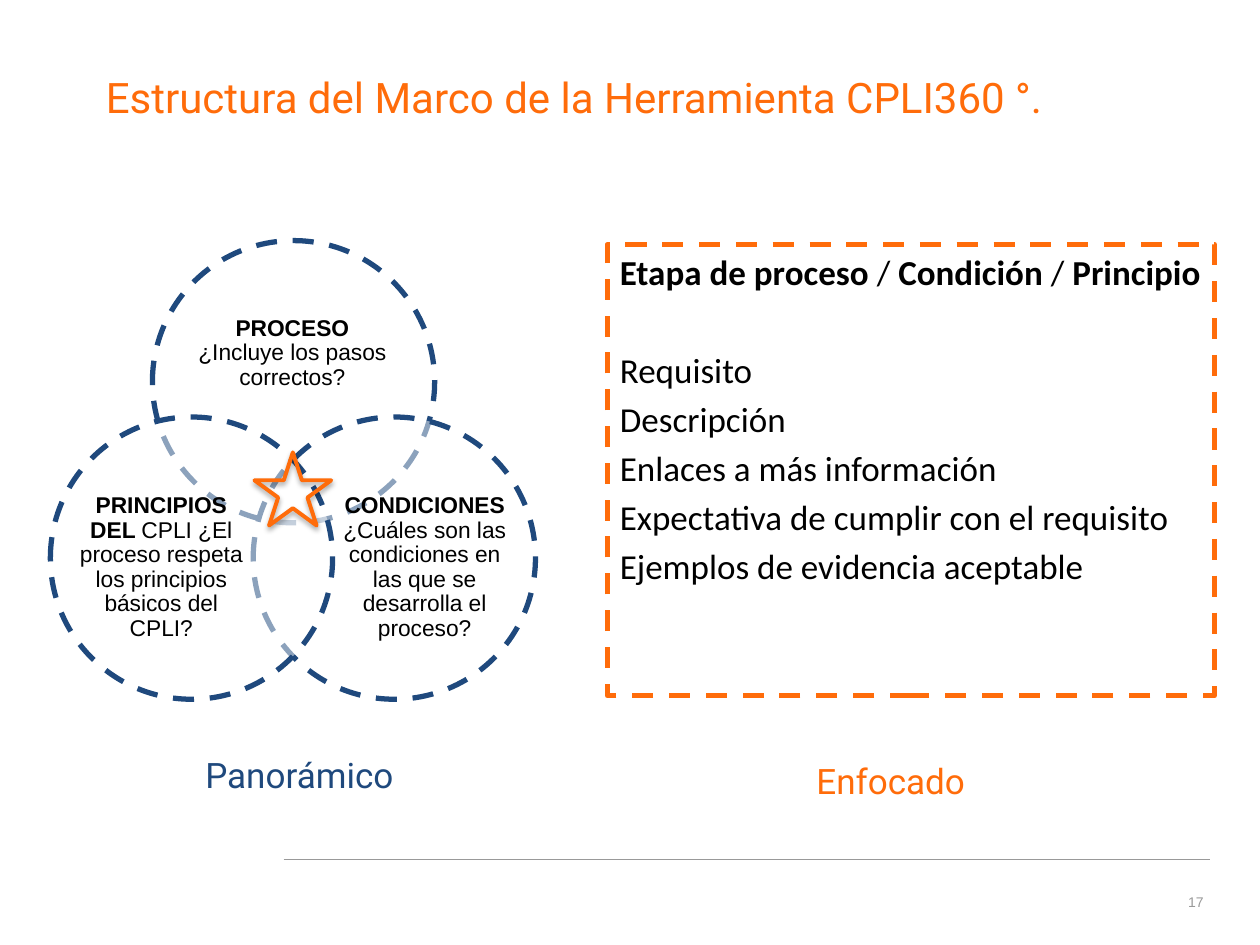
from dataclasses import dataclass
from lxml.etree import SubElement
from pptx import Presentation
from pptx.dml.color import RGBColor
from pptx.enum.dml import MSO_LINE
from pptx.enum.shapes import MSO_CONNECTOR, MSO_SHAPE
from pptx.enum.text import MSO_ANCHOR, MSO_AUTO_SIZE, PP_ALIGN
from pptx.oxml.ns import qn
from pptx.util import Pt


@dataclass(frozen=True)
class Theme:
    orange: str = "FF6C0A"
    navy: str = "1F497D"
    black: str = "000000"
    white: str = "FFFFFF"
    gray: str = "999999"
    head: str = "Roboto"
    body: str = "Calibri"
    label: str = "Arial"
    title: int = 24
    text: int = 20
    note: int = 13
    page: int = 8


THEME = Theme()
SIDE = 161.3
RINGS = [
    ((87.1, 137.5), (108, 165.6, 118, 72.7),
     [[("PROCESO", True)], [("¿Incluye los pasos correctos?", False)]]),
    ((144.7, 238.3), (194.4, 280.1, 96.5, 88.6),
     [[("CONDICIONES ", True),
       ("¿Cuáles son las condiciones en las que se desarrolla el proceso?", False)]]),
    ((28.8, 238.3), (43.9, 280.1, 96.5, 88.6),
     [[("PRINCIPIOS DEL ", True),
       ("CPLI ¿El proceso respeta los principios básicos del CPLI?", False)]]),
]
ITEMS = [
    [("Etapa de proceso ", True), ("/ ", False), ("Condición", True),
     (" / ", False), ("Principio", True)],
    [("Requisito", False)],
    [("Descripción", False)],
    [("Enlaces a más información", False)],
    [("Expectativa de cumplir con el requisito", False)],
    [("Ejemplos de evidencia aceptable", False)],
]


def apply(thing, form):
    for name, value in form.items():
        setattr(thing, name, value)


def place(shape, box):
    names = ("left", "top", "width", "height")
    apply(shape, dict(zip(names, map(Pt, box))))


def stroke(line, color, width, dash=None):
    line.color.rgb = RGBColor.from_string(color)
    apply(line, {"width": Pt(width), "dash_style": dash})


def write(shape, paras, face, size, color, inset=(7.2, 3.6),
          anchor=MSO_ANCHOR.TOP, form=None):
    frame = shape.text_frame
    side, edge = map(Pt, inset)
    apply(frame, {"word_wrap": True, "auto_size": MSO_AUTO_SIZE.NONE,
                  "vertical_anchor": anchor,
                  "margin_left": side, "margin_right": side,
                  "margin_top": edge, "margin_bottom": edge})
    for i, runs in enumerate(paras):
        para = frame.add_paragraph() if i else frame.paragraphs[0]
        apply(para, {"alignment": PP_ALIGN.LEFT, **(form or {})})
        for text, bold in runs:
            run = para.add_run()
            run.text = text
            apply(run.font, {"name": face, "size": Pt(size), "bold": bold})
            run.font.color.rgb = RGBColor.from_string(color)
    return frame.paragraphs


def label(slide, box, paras, *style, **more):
    shape = slide.shapes.add_textbox(*map(Pt, box))
    write(shape, paras, *style, **more)


def ring(slide, spot, box, paras):
    shape = slide.shapes.add_shape(MSO_SHAPE.OVAL, *map(Pt, (*spot, SIDE, SIDE)))
    shape.shadow.inherit = False
    shape.fill.solid()
    shape.fill.fore_color.rgb = RGBColor.from_string(THEME.white)
    tint = shape.fill._xPr.find(qn("a:solidFill"))[0]
    SubElement(tint, qn("a:alpha"), val="49000")
    stroke(shape.line, THEME.navy, 3, MSO_LINE.DASH)
    label(slide, box, paras, THEME.label, THEME.note, THEME.black,
          inset=(0, 0), anchor=MSO_ANCHOR.MIDDLE,
          form={"alignment": PP_ALIGN.CENTER, "line_spacing": 0.9})


def panel(shape):
    place(shape, (347, 139.7, 347, 257.8))
    stroke(shape.line, THEME.orange, 3, MSO_LINE.DASH)
    paras = write(shape, ITEMS, THEME.body, THEME.text, THEME.black)
    for i, para in enumerate(paras):
        props = para._p.get_or_add_pPr()
        props.set("marL", "0")
        props.set("indent", "0")
        SubElement(props, qn("a:buNone"))
        para.space_before = Pt((0, 32)[i] if i < 2 else 4)


def star(slide):
    shape = slide.shapes.add_shape(MSO_SHAPE.STAR_5_POINT,
                                   *map(Pt, (145.4, 258.5, 43.9, 41.8)))
    shape.fill.background()
    stroke(shape.line, THEME.orange, 2.25)
    shape.shadow.inherit = False
    glow = SubElement(shape._element.spPr.find(qn("a:effectLst")),
                      qn("a:outerShdw"), blurRad=str(Pt(3.1)),
                      dist=str(Pt(1.8)), dir="5400000", rotWithShape="0")
    tint = SubElement(glow, qn("a:srgbClr"), val=THEME.black)
    SubElement(tint, qn("a:alpha"), val="35000")


def rule(slide):
    line = slide.shapes.add_connector(MSO_CONNECTOR.STRAIGHT,
                                      *map(Pt, (162, 491, 691.2, 491)))
    stroke(line.line, THEME.gray, 0.75)
    SubElement(line._element.spPr, qn("a:effectLst"))


def main():
    deck = Presentation()
    apply(deck, {"slide_width": Pt(720), "slide_height": Pt(540)})
    slide = deck.slides.add_slide(deck.slide_layouts[1])
    title, body = slide.placeholders
    place(title, (53.3, 37.4, 653.8, 96.5))
    write(title, [[("Estructura del Marco de la Herramienta CPLI360 °.", False)]],
          THEME.head, THEME.title, THEME.orange)
    panel(body)
    rule(slide)
    for spot, box, paras in RINGS:
        ring(slide, spot, box, paras)
    star(slide)
    label(slide, (110.2, 427, 150.5, 48.2), [[("Panorámico", False)]],
          THEME.head, THEME.text, THEME.navy)
    label(slide, (459.4, 430.6, 150.5, 48.2), [[("Enfocado", False)]],
          THEME.head, THEME.text, THEME.orange)
    label(slide, (671.8, 506.9, 28, 17.3), [[("17", False)]],
          THEME.label, THEME.page, THEME.gray)
    deck.save("out.pptx")


if __name__ == "__main__":
    main()
